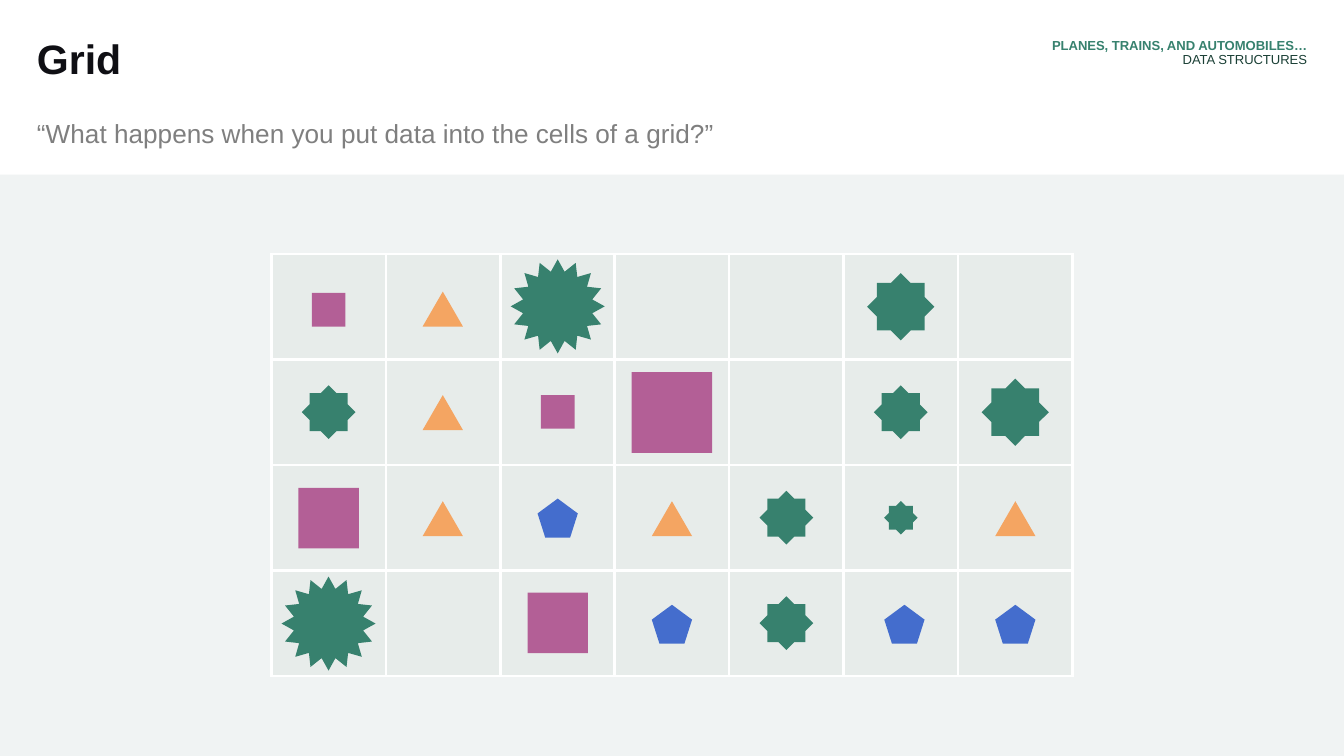
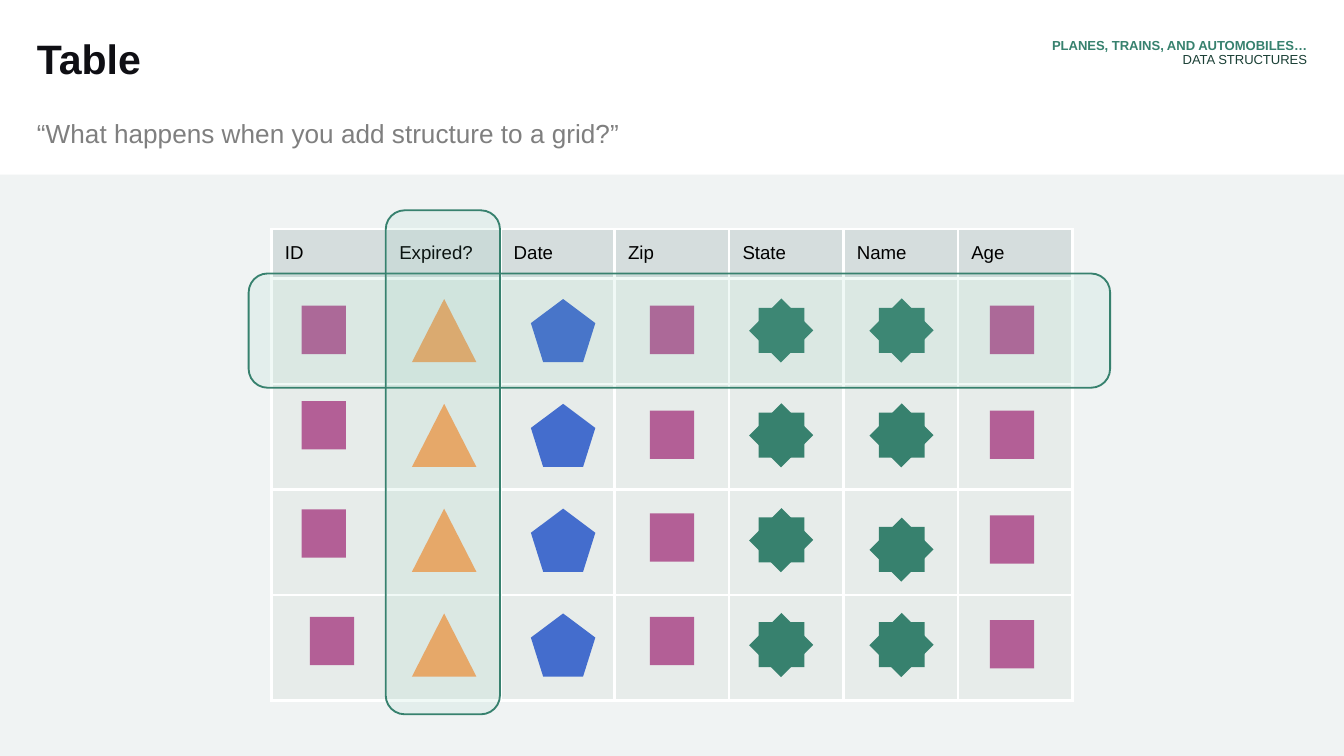
from copy import deepcopy
from dataclasses import dataclass, replace
from math import cos, pi, sin
from typing import NamedTuple, Optional

from lxml.etree import SubElement
from pptx import Presentation
from pptx.dml.color import RGBColor
from pptx.enum.shapes import MSO_SHAPE as Preset
from pptx.enum.text import PP_ALIGN as Align
from pptx.oxml import parse_xml
from pptx.oxml.ns import nsdecls, qn
from pptx.util import Emu, Pt

EMU_PER_PX = 4572  # 200 px to the inch


def px(length: float) -> Emu:
    return Emu(round(length * EMU_PER_PX))


@dataclass(frozen=True)
class Theme:
    font: str = "Arial"
    title_size: int = 22
    question_size: int = 14
    column_size: int = 10
    header_size: int = 7
    ink: str = "0F0F14"
    gray: str = "7F7F7F"
    black: str = "000000"
    white: str = "FFFFFF"
    band: str = "F0F3F3"
    cell: str = "E7ECEA"
    column_head: str = "D5DDDD"
    green: str = "37816E"
    dark_green: str = "1B4036"
    highlight: str = "73C5AF"
    purple: str = "B35F96"
    orange: str = "F4A562"
    blue: str = "446DCD"
    border_width: float = 1.5
    outline_width: float = 1
    highlight_alpha: int = 10


THEME = Theme()


class Box(NamedTuple):
    left: int
    top: int
    width: int
    height: int

    def emu(self) -> tuple:
        return tuple(px(length) for length in self)


class TextStyle(NamedTuple):
    size: int
    color: str
    bold: bool = False


@dataclass(frozen=True)
class Mark:
    """A data symbol; without a preset it is an eight-pointed star."""
    preset: Optional[Preset]
    color: str
    width: int
    height: int
    dx: int = 0
    dy: int = 0


class MarkColumn(NamedTuple):
    """One symbol repeated down a column, with a (dx, dy) nudge for each row."""
    mark: Mark
    left: int
    top: int
    nudges: tuple = ((0, 0),) * 4


SLIDE_WIDTH, SLIDE_HEIGHT = 2000, 1125
BAND_TOP = 260
BAND = Box(0, BAND_TOP, SLIDE_WIDTH, SLIDE_HEIGHT - BAND_TOP)
TITLE_BOX = Box(55, 58, 1598, 118)
QUESTION_BOX = Box(55, 175, 1418, 94)
HEADER_BOX = Box(1331, 58, 614, 72)

TITLE = TextStyle(THEME.title_size, THEME.ink, True)
QUESTION = TextStyle(THEME.question_size, THEME.gray)
COLUMN_NAME = TextStyle(THEME.column_size, THEME.black)
DECK_NAME = TextStyle(THEME.header_size, THEME.green, True)
SECTION_NAME = TextStyle(THEME.header_size, THEME.dark_green)

GRID = Box(404, 378, 1192, 628)
TABLE_TOP, HEAD_HEIGHT = 341, 26
ROWS, COLUMNS = 4, 7
COLUMN_NAMES = ("ID", "Expired?", "Date", "Zip", "State", "Name", "Age")


def square(size: int) -> Mark:
    return Mark(Preset.RECTANGLE, THEME.purple, size, size)


def star(size: int) -> Mark:
    return Mark(None, THEME.green, size, size)


TRIANGLE = Mark(Preset.ISOSCELES_TRIANGLE, THEME.orange, 60, 52, dy=1)
HIGH_TRIANGLE = replace(TRIANGLE, dy=4)
PENTAGON = Mark(Preset.REGULAR_PENTAGON, THEME.blue, 60, 58, dy=1)
BURST = Mark(Preset.STAR_16_POINT, THEME.green, 140, 140)

GRID_MARKS = (
    (replace(square(50), dy=4), HIGH_TRIANGLE, BURST, None, None, star(100), None),
    (star(80), TRIANGLE, square(50), square(120), None, star(80), star(100)),
    (square(90), TRIANGLE, PENTAGON, TRIANGLE, star(80), star(50), TRIANGLE),
    (BURST, None, square(90), PENTAGON, star(80), replace(PENTAGON, dx=5), PENTAGON),
)

RECORD_PITCH = 156
RECORD_SQUARE = Mark(Preset.RECTANGLE, THEME.purple, 66, 72)
RECORD_TRIANGLE = replace(TRIANGLE, width=96, height=94)
RECORD_PENTAGON = replace(PENTAGON, width=96, height=94)
RECORD_STAR = star(68)
RECORD_COLUMNS = (
    MarkColumn(RECORD_SQUARE, 449, 455, ((0, 0), (0, -14), (0, -9), (12, -5))),
    MarkColumn(RECORD_SQUARE, 967, 455, ((0, 0), (0, 0), (0, -3), (0, -5))),
    MarkColumn(RECORD_SQUARE, 1473, 455),
    MarkColumn(RECORD_TRIANGLE, 613, 445),
    MarkColumn(RECORD_PENTAGON, 790, 445),
    MarkColumn(RECORD_STAR, 1129, 458),
    MarkColumn(RECORD_STAR, 1308, 458, ((0, 0), (0, 0), (0, 14), (0, 0))),
)
ROW_HIGHLIGHT = Box(370, 407, 1282, 170)
COLUMN_HIGHLIGHT = Box(574, 313, 170, 750)


def paint(shape, color: str) -> None:
    """Give a shape a flat fill with no line or shadow."""
    shape.shadow.inherit = False
    shape.fill.solid()
    shape.fill.fore_color.rgb = RGBColor.from_string(color)
    shape.line.fill.background()


def add_preset(shapes, preset: Preset, box: Box, color: str):
    shape = shapes.add_shape(preset, *box.emu())
    paint(shape, color)
    return shape


def add_run(paragraph, text: str, style: TextStyle):
    run = paragraph.add_run()
    run.text = text
    run.font.name = THEME.font
    run.font.size = Pt(style.size)
    run.font.bold = style.bold
    run.font.color.rgb = RGBColor.from_string(style.color)
    return run


def add_text_box(slide, box: Box, right_inset: int = 20):
    """Add a wrapping text box and return its first paragraph."""
    frame = slide.shapes.add_textbox(*box.emu()).text_frame
    frame.word_wrap = True
    frame.margin_left = frame.margin_top = 0
    frame.margin_right, frame.margin_bottom = px(right_inset), px(20)
    return frame.paragraphs[0]


def add_header(slide) -> None:
    paragraph = add_text_box(slide, HEADER_BOX, right_inset=0)
    paragraph.alignment = Align.RIGHT
    paragraph.line_spacing = 0.9
    run = add_run(paragraph, "PLANES, TRAINS, AND AUTOMOBILES…", DECK_NAME)
    paragraph.add_line_break()
    paragraph._p[-1].append(deepcopy(run._r.rPr))
    add_run(paragraph, "DATA STRUCTURES", SECTION_NAME)


def add_framed_slide(presentation, title: str, question: str):
    """Add a slide with the band, title and question that all slides share."""
    slide = presentation.slides.add_slide(presentation.slide_layouts[6])
    add_preset(slide.shapes, Preset.RECTANGLE, BAND, THEME.band)
    paragraph = add_text_box(slide, TITLE_BOX)
    paragraph.line_spacing = 0.9
    add_run(paragraph, title, TITLE)
    add_run(add_text_box(slide, QUESTION_BOX), question, QUESTION)
    return slide


def style_cell(cell, color: str) -> None:
    cell.fill.solid()
    cell.fill.fore_color.rgb = RGBColor.from_string(color)
    properties = cell._tc.get_or_add_tcPr()
    for index, side in enumerate(("lnL", "lnR", "lnT", "lnB")):
        properties.insert(index, parse_xml(
            f'<a:{side} {nsdecls("a")} w="{Pt(THEME.border_width)}"><a:solidFill>'
            f'<a:srgbClr val="{THEME.white}"/></a:solidFill></a:{side}>'))


def add_cells(slide, top: int, names: tuple = ()) -> None:
    """Add the grid of cells, under a row of column names if there are any."""
    head_rows = 1 if names else 0
    box = Box(GRID.left, top, GRID.width, GRID.height + head_rows * HEAD_HEIGHT)
    table = slide.shapes.add_table(ROWS + head_rows, COLUMNS, *box.emu()).table
    table.first_row = table.horz_banding = False
    for column in table.columns:
        column.width = px(GRID.width / COLUMNS)
    for index, row in enumerate(table.rows):
        is_head = index < head_rows
        row.height = px(HEAD_HEIGHT if is_head else GRID.height / ROWS)
        for cell in row.cells:
            style_cell(cell, THEME.column_head if is_head else THEME.cell)
    for index, name in enumerate(names):
        cell = table.cell(0, index)
        cell.margin_left = cell.margin_right = cell.margin_top = cell.margin_bottom = px(20)
        add_run(cell.text_frame.paragraphs[0], name, COLUMN_NAME)


def add_star(slide, center_x: float, center_y: float, mark: Mark) -> None:
    """Draw the outline of two equal squares, one turned by 45 degrees."""
    outer = mark.width / 2
    inner = outer * cos(pi / 4) / cos(pi / 8)
    points = []
    for step in range(16):
        radius, angle = (inner if step % 2 else outer), step * pi / 8
        points.append((px(center_x - radius * sin(angle)), px(center_y - radius * cos(angle))))
    builder = slide.shapes.build_freeform(*points[0], scale=1.0)
    builder.add_line_segments(points[1:], close=True)
    paint(builder.convert_to_shape(), mark.color)


def add_grid_marks(slide) -> None:
    """Centre each mark in its cell, moved by its own offset."""
    for row, marks in enumerate(GRID_MARKS):
        for column, mark in enumerate(marks):
            if mark is None:
                continue
            center_x = GRID.left + GRID.width / COLUMNS * (column + 0.5) + mark.dx
            center_y = GRID.top + GRID.height / ROWS * (row + 0.5) + mark.dy
            if mark.preset is None:
                add_star(slide, center_x, center_y, mark)
            else:
                box = Box(round(center_x - mark.width / 2), round(center_y - mark.height / 2),
                          mark.width, mark.height)
                add_preset(slide.shapes, mark.preset, box, mark.color)


def add_square_pair(slide, left: int, top: int, mark: Mark) -> None:
    """Group a square with a second one turned by 45 degrees."""
    group = slide.shapes.add_group_shape()
    long, short = mark.width, mark.width - 1
    for width, height, rotation in ((long, short, 0), (short, long, 45)):
        part = add_preset(group.shapes, Preset.RECTANGLE, Box(left, top, width, height), mark.color)
        part.rotation = rotation


def add_record_marks(slide) -> None:
    for mark, left, top, nudges in RECORD_COLUMNS:
        for row, (dx, dy) in enumerate(nudges):
            x, y = left + dx, top + row * RECORD_PITCH + dy
            if mark.preset is None:
                add_square_pair(slide, x, y, mark)
            else:
                add_preset(slide.shapes, mark.preset, Box(x, y, mark.width, mark.height), mark.color)


def add_highlight(slide, box: Box) -> None:
    shape = add_preset(slide.shapes, Preset.ROUNDED_RECTANGLE, box, THEME.highlight)
    color = shape._element.spPr.find(qn("a:solidFill"))[0]
    SubElement(color, qn("a:alpha")).set("val", str(THEME.highlight_alpha * 1000))
    shape.line.color.rgb = RGBColor.from_string(THEME.green)
    shape.line.width = Pt(THEME.outline_width)


def main() -> None:
    presentation = Presentation()
    presentation.slide_width, presentation.slide_height = px(SLIDE_WIDTH), px(SLIDE_HEIGHT)

    grid = add_framed_slide(presentation, "Grid",
                            "“What happens when you put data into the cells of a grid?”")
    add_cells(grid, GRID.top)
    add_grid_marks(grid)
    add_header(grid)

    table = add_framed_slide(presentation, "Table",
                             "“What happens when you add structure to a grid?”")
    add_cells(table, TABLE_TOP, COLUMN_NAMES)
    add_record_marks(table)
    for box in (ROW_HIGHLIGHT, COLUMN_HIGHLIGHT):
        add_highlight(table, box)
    add_header(table)

    presentation.save("out.pptx")


if __name__ == "__main__":
    main()
